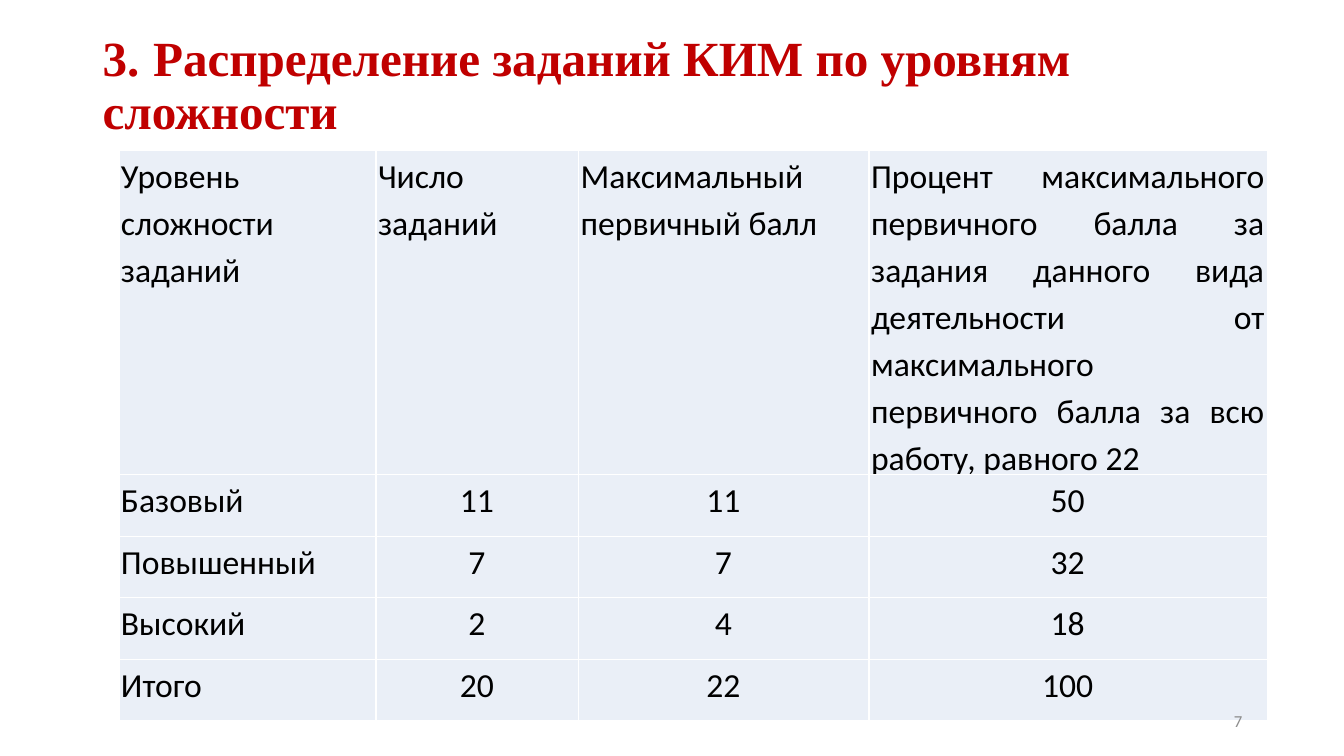
import pptx
import pptx.util
import pptx.dml.color
import pptx.enum.text
import pptx.oxml
import pptx.oxml.ns

Inches = pptx.util.Inches
Pt = pptx.util.Pt
RGBColor = pptx.dml.color.RGBColor
ALIGN = pptx.enum.text.PP_ALIGN
ANCHOR = pptx.enum.text.MSO_ANCHOR

# Content
TITLE = "3.\tРаспределение заданий КИМ по уровням сложности"
SLIDE_NUMBER = "7"
ROWS = [
    ("Уровень сложности заданий", "Число заданий", "Максимальный первичный балл",
     "Процент максимального первичного балла за задания данного вида деятельности "
     "от максимального первичного балла за всю работу, равного 22"),
    ("Базовый", "11", "11", "50"),
    ("Повышенный", "7", "7", "32"),
    ("Высокий", "2", "4", "18"),
    ("Итого", "20", "22", "100"),
]
COLUMN_WIDTHS = [2.55, 2.01, 2.88, 3.95]
HEADER_HEIGHT, ROW_HEIGHT = 3.05, 0.61

# Formats
RED = RGBColor(0xC0, 0x00, 0x00)
BLACK = RGBColor(0x00, 0x00, 0x00)
GRAY = RGBColor(0x8C, 0x8C, 0x8C)
PALE_BLUE = RGBColor(0xEA, 0xEF, 0xF7)
WHITE = RGBColor(0xFF, 0xFF, 0xFF)
TITLE_FONT = {"name": "Times New Roman", "size": Pt(35.1), "bold": True, "color": RED}
TABLE_FONT = {"name": "Calibri", "size": Pt(24), "bold": False, "color": BLACK}
NUMBER_FONT = {"name": "Calibri", "size": Pt(12), "color": GRAY}
CELL_FORMAT = {"margin_left": Inches(0.02), "margin_right": Inches(0.03),
               "margin_top": 0, "margin_bottom": 0, "vertical_anchor": ANCHOR.TOP}


def set_attributes(target, values):
    for name, value in values.items():
        setattr(target, name, value)


def write_text(text_frame, text, font, **paragraph_format):
    paragraph = text_frame.paragraphs[0]
    set_attributes(paragraph, paragraph_format)
    run = paragraph.add_run()
    run.text = text
    for name, value in font.items():
        if name == "color":
            run.font.color.rgb = value
        else:
            setattr(run.font, name, value)


def add_text_box(slide, box, frame_format, text, font, **paragraph_format):
    text_box = slide.shapes.add_textbox(*map(Inches, box))
    set_attributes(text_box.text_frame, {"word_wrap": True, **frame_format})
    write_text(text_box.text_frame, text, font, **paragraph_format)


def set_borders(cell, color, width):
    properties = cell._tc.get_or_add_tcPr()
    for index, side in enumerate(("lnL", "lnR", "lnT", "lnB")):
        properties.insert(index, pptx.oxml.parse_xml(
            f'<a:{side} {pptx.oxml.ns.nsdecls("a")} w="{width}"><a:solidFill>'
            f'<a:srgbClr val="{color}"/></a:solidFill></a:{side}>'))


def add_levels_table(slide):
    heights = [HEADER_HEIGHT] + [ROW_HEIGHT] * (len(ROWS) - 1)
    box = (1.18, 1.49, sum(COLUMN_WIDTHS), sum(heights))
    table = slide.shapes.add_table(
        len(ROWS), len(COLUMN_WIDTHS), *map(Inches, box)).table
    table.horz_banding = False
    table.first_row = False
    for column, width in zip(table.columns, COLUMN_WIDTHS):
        column.width = Inches(width)
    for row, height in zip(table.rows, heights):
        row.height = Inches(height)
    for row_index, texts in enumerate(ROWS):
        for column_index, text in enumerate(texts):
            cell = table.cell(row_index, column_index)
            set_attributes(cell, CELL_FORMAT)
            cell.fill.solid()
            cell.fill.fore_color.rgb = PALE_BLUE
            set_borders(cell, WHITE, Pt(1))
            is_number = row_index > 0 and column_index > 0
            write_text(cell.text_frame, text, TABLE_FONT, line_spacing=1.15,
                       alignment=ALIGN.CENTER if is_number else ALIGN.JUSTIFY)


def main():
    presentation = pptx.Presentation()
    presentation.slide_width = Inches(13.33)
    presentation.slide_height = Inches(7.5)
    slide = presentation.slides.add_slide(presentation.slide_layouts[6])

    # Title, table and slide number
    add_text_box(slide, (0.92, 0.34, 11.5, 1.45),
                 {"vertical_anchor": ANCHOR.TOP, "margin_top": 0},
                 TITLE, TITLE_FONT, line_spacing=0.9)
    add_levels_table(slide)
    add_text_box(slide, (9.42, 6.95, 3, 0.4), {"vertical_anchor": ANCHOR.MIDDLE},
                 SLIDE_NUMBER, NUMBER_FONT, alignment=ALIGN.RIGHT)

    presentation.save("out.pptx")


if __name__ == "__main__":
    main()
